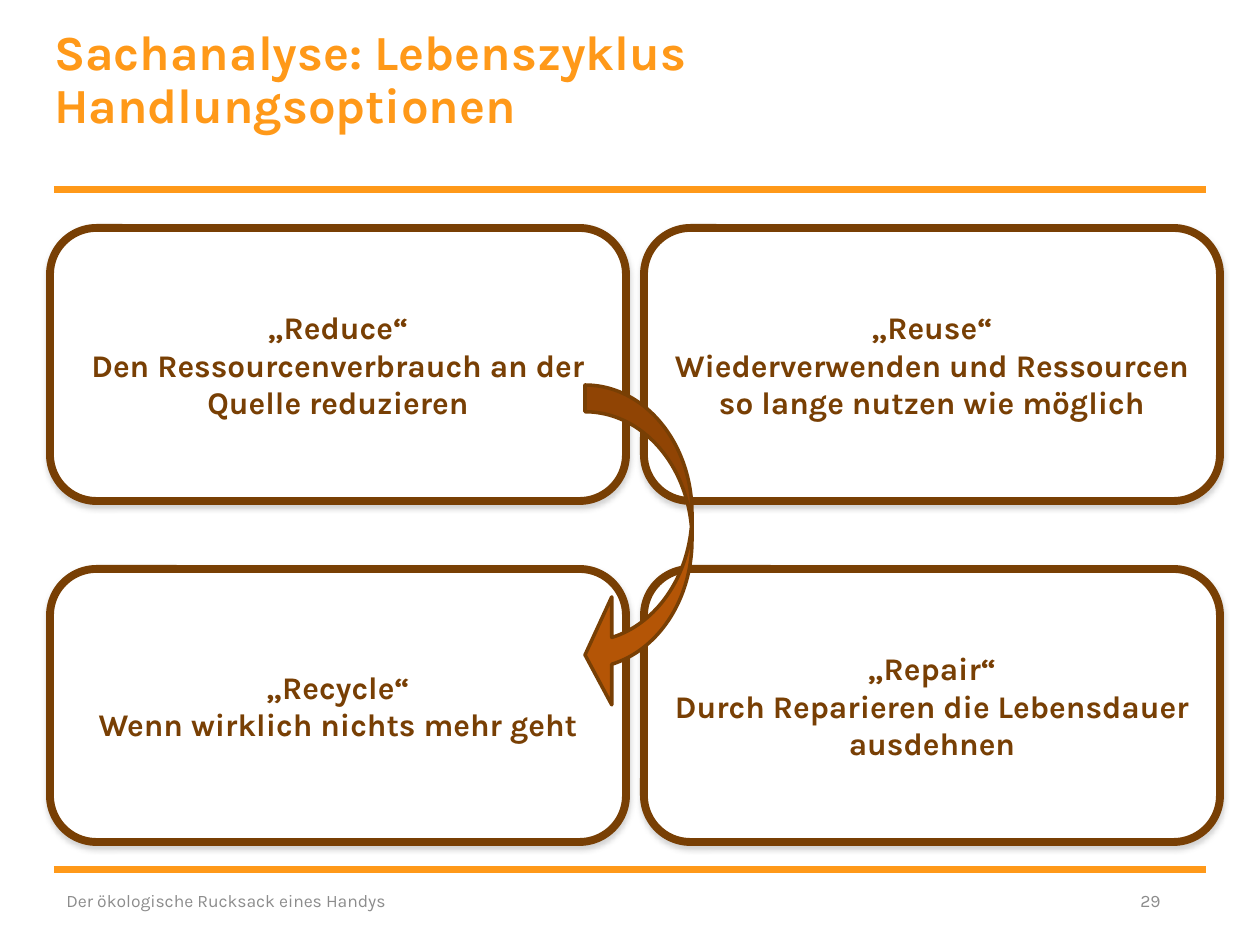
"""Build the slide on options for action in the life cycle of a mobile phone."""
from dataclasses import dataclass

import pptx
import pptx.dml.color
import pptx.enum.shapes
import pptx.enum.text
import pptx.oxml
import pptx.oxml.ns
import pptx.util

EMU_PER_PX = 914400 / 126
FONT = "Karla"
COLORS = {
    "orange": "FF9919",
    "brown": "783F04",
    "rust": "B45506",
    "white": "FFFFFF",
    "gray": "8C8C8C",
    "shadow": "808080",
}
ALIGN = pptx.enum.text.PP_ALIGN
ANCHOR = pptx.enum.text.MSO_ANCHOR
SHAPE = pptx.enum.shapes.MSO_SHAPE

CARD_LEFT, CARD_TOP = 50, 228
CARD_WIDTH, CARD_HEIGHT = 576, 273
COLUMN_STEP, ROW_STEP = 594, 341


@dataclass
class Card:
    column: int
    row: int
    text: str


@dataclass
class Footer:
    left: int
    width: int
    text: str
    align: ALIGN


CARDS = [
    Card(0, 0, "„Reduce“\vDen Ressourcenverbrauch an der Quelle reduzieren"),
    Card(1, 0, "„Reuse“\nWiederverwenden und Ressourcen so lange nutzen wie möglich"),
    Card(0, 1, "„Recycle“\vWenn wirklich nichts mehr geht"),
    Card(1, 1, "„Repair“\vDurch Reparieren die Lebensdauer ausdehnen"),
]
FOOTERS = [
    Footer(54, 426, "Der ökologische Rucksack eines Handys", ALIGN.LEFT),
    Footer(948, 225, "29", ALIGN.RIGHT),
]
RULE_TOPS = [190, 870]


def px(length: int) -> int:
    """Turn pixels into EMU."""
    return round(length * EMU_PER_PX)


def color(name: str) -> pptx.dml.color.RGBColor:
    """Look up a named colour."""
    return pptx.dml.color.RGBColor.from_string(COLORS[name])


def write(box, text: str, size: int, ink: str, align: ALIGN, anchor: ANCHOR, bold: bool = False) -> None:
    """Fill a box with uniformly formatted text."""
    frame = box.text_frame
    frame.text = text
    frame.word_wrap = True
    frame.auto_size = pptx.enum.text.MSO_AUTO_SIZE.NONE
    frame.vertical_anchor = anchor
    for para in frame.paragraphs:
        para.alignment = align
        para.font.name = FONT
        para.font.size = pptx.util.Pt(size)
        para.font.bold = bold
        para.font.color.rgb = color(ink)


def add_rule(page, top: int) -> None:
    """Draw a horizontal rule across the page."""
    rule = page.shapes.add_connector(
        pptx.enum.shapes.MSO_CONNECTOR.STRAIGHT, px(54), px(top), px(1206), px(top)
    )
    rule.line.color.rgb = color("orange")
    rule.line.width = pptx.util.Pt(4)
    properties = rule._element.spPr
    properties.append(pptx.oxml.parse_xml(f'<a:effectLst {pptx.oxml.ns.nsdecls("a")}/>'))


def add_outlined(page, kind: SHAPE, left: int, top: int, width: int, height: int,
                 fill: str, weight: float, adjustments: list[float]):
    """Draw a filled shape with a brown outline."""
    shape = page.shapes.add_shape(kind, px(left), px(top), px(width), px(height))
    for index, value in enumerate(adjustments):
        shape.adjustments[index] = value
    shape.fill.solid()
    shape.fill.fore_color.rgb = color(fill)
    shape.line.color.rgb = color("brown")
    shape.line.width = pptx.util.Pt(weight)
    shape.shadow.inherit = False
    return shape


def add_card(page, card: Card) -> None:
    """Draw one rounded card with a soft shadow."""
    shape = add_outlined(
        page, SHAPE.ROUNDED_RECTANGLE,
        CARD_LEFT + card.column * COLUMN_STEP, CARD_TOP + card.row * ROW_STEP,
        CARD_WIDTH, CARD_HEIGHT, "white", 4.5, [0.17],
    )
    effects = shape._element.spPr.find(pptx.oxml.ns.qn("a:effectLst"))
    effects.append(pptx.oxml.parse_xml(
        f'<a:outerShdw {pptx.oxml.ns.nsdecls("a")} blurRad="{pptx.util.Pt(3.1)}" '
        f'dist="{pptx.util.Pt(1.8)}" dir="5400000" rotWithShape="0">'
        f'<a:srgbClr val="{COLORS["shadow"]}"><a:alpha val="35000"/></a:srgbClr></a:outerShdw>'
    ))
    write(shape, card.text, 18, "brown", ALIGN.CENTER, ANCHOR.MIDDLE, bold=True)


def add_footer(page, footer: Footer) -> None:
    """Write one footer entry."""
    box = page.shapes.add_textbox(px(footer.left), px(876), px(footer.width), px(50))
    write(box, footer.text, 10, "gray", footer.align, ANCHOR.MIDDLE)


def set_title(page) -> None:
    """Place and format the title."""
    title = page.shapes.title
    title.left, title.top, title.width, title.height = px(54), px(28), px(843), px(147)
    write(title, "Sachanalyse: Lebenszyklus\vHandlungsoptionen", 28, "orange",
          ALIGN.LEFT, ANCHOR.TOP, bold=True)
    frame = title.text_frame
    frame.margin_left = frame.margin_top = frame.margin_right = frame.margin_bottom = 0
    frame.paragraphs[0].line_spacing = 0.9


def main() -> None:
    """Build and save the deck."""
    deck = pptx.Presentation()
    deck.slide_width, deck.slide_height = px(1260), px(945)
    page = deck.slides.add_slide(deck.slide_layouts.get_by_name("Title Only"))
    for top in RULE_TOPS:
        add_rule(page, top)
    for card in CARDS:
        add_card(page, card)
    add_outlined(page, SHAPE.CURVED_LEFT_ARROW, 585, 385, 107, 324, "rust", 2, [0.25, 1.01, 0.25])
    set_title(page)
    for footer in FOOTERS:
        add_footer(page, footer)
    deck.save("out.pptx")


if __name__ == "__main__":
    main()
